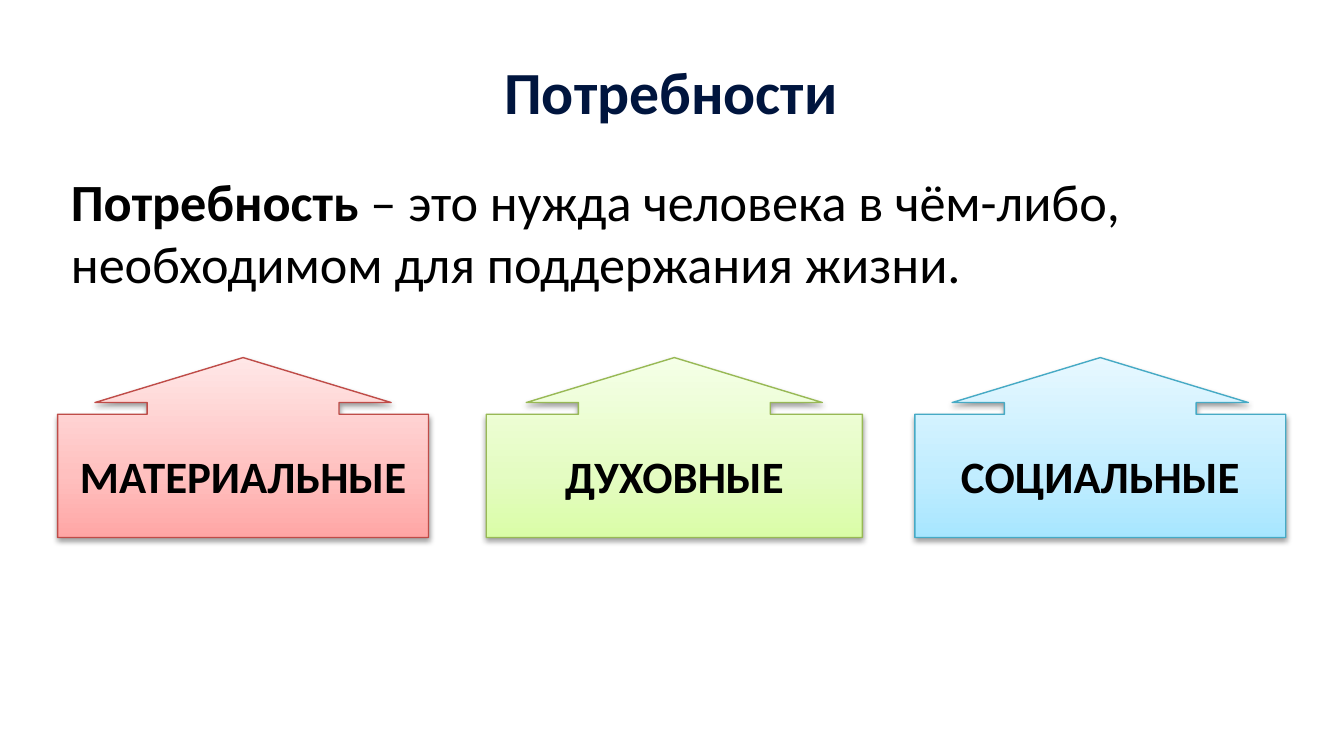
from copy import deepcopy

from lxml.etree import SubElement
from pptx import Presentation
from pptx.dml.color import RGBColor
from pptx.enum.shapes import MSO_SHAPE as Shape
from pptx.enum.text import MSO_ANCHOR as Anchor, MSO_AUTO_SIZE as AutoSize, PP_ALIGN as Align
from pptx.oxml.ns import qn
from pptx.util import Cm, Pt

COLORS = {
    "title": "00153E",
    "text": "000000",
    "shadow": "000000",
    "material": ("FFA6A5", "FFC0BF", "FFE7E7"),
    "material_line": "BF4C48",
    "spiritual": ("DAFDA7", "E4FCC2", "F5FFE7"),
    "spiritual_line": "98B955",
    "social": ("A7E6FF", "C1EDFF", "E7F8FF"),
    "social_line": "46AAC5",
}


def add_text(paragraph, text, size=24, color="text", bold=False, align=Align.LEFT):
    paragraph.alignment = align
    run = paragraph.add_run()
    run.text = text
    run.font.name = "Calibri"
    run.font.size = Pt(size)
    run.font.bold = bold
    run.font.color.rgb = RGBColor.from_string(COLORS[color])


prs = Presentation()
prs.slide_width = Cm(25.4)
prs.slide_height = Cm(14.29)
slide = prs.slides.add_slide(prs.slide_layouts[6])

title = slide.shapes.add_textbox(Cm(2.69), Cm(0.91), Cm(19.99), Cm(1.63)).text_frame
definition = slide.shapes.add_textbox(Cm(1.09), Cm(3.07), Cm(23.01), Cm(2.64)).text_frame
for frame in (title, definition):
    frame.word_wrap = True
    frame.auto_size = AutoSize.SHAPE_TO_FIT_TEXT

add_text(title.paragraphs[0], "Потребности", size=32, color="title", bold=True, align=Align.CENTER)
add_text(definition.paragraphs[0], "Потребность", size=28, bold=True)
add_text(
    definition.paragraphs[0],
    " – это нужда человека в чём-либо, необходимом для поддержания жизни.",
    size=28,
)

needs = [
    ("МАТЕРИАЛЬНЫЕ", "material", 7.01),
    ("ДУХОВНЫЕ", "spiritual", 7.11),
    ("СОЦИАЛЬНЫЕ", "social", 7.01),
]
for index, (label, kind, width) in enumerate(needs):
    need = slide.shapes.add_shape(
        Shape.UP_ARROW_CALLOUT, Cm(1.09 + 8.1 * index), Cm(6.76), Cm(width), Cm(3.4)
    )
    for position, ratio in enumerate((1.066, 0.823, 0.25, 0.685)):
        need.adjustments[position] = ratio

    need.fill.gradient()
    need.fill.gradient_angle = 90
    properties = need.element.spPr
    stop_list = properties.find(".//" + qn("a:gsLst"))
    stop_list.append(deepcopy(stop_list[-1]))
    for stop, place, tint in zip(need.fill.gradient_stops, (0, 0.35, 1), COLORS[kind]):
        stop.position = place
        stop.color.rgb = RGBColor.from_string(tint)
    need.line.color.rgb = RGBColor.from_string(COLORS[kind + "_line"])
    need.line.width = Pt(0.75)

    need.shadow.inherit = False
    shadow = SubElement(
        properties.find(qn("a:effectLst")), qn("a:outerShdw"),
        blurRad=str(Pt(3.1)), dist=str(Pt(1.6)), dir="5400000", rotWithShape="0",
    )
    shade = SubElement(shadow, qn("a:srgbClr"), val=COLORS["shadow"])
    SubElement(shade, qn("a:alpha"), val="38000")

    need.text_frame.word_wrap = True
    need.text_frame.vertical_anchor = Anchor.MIDDLE
    add_text(need.text_frame.paragraphs[0], label, bold=True, align=Align.CENTER)

prs.save("out.pptx")
